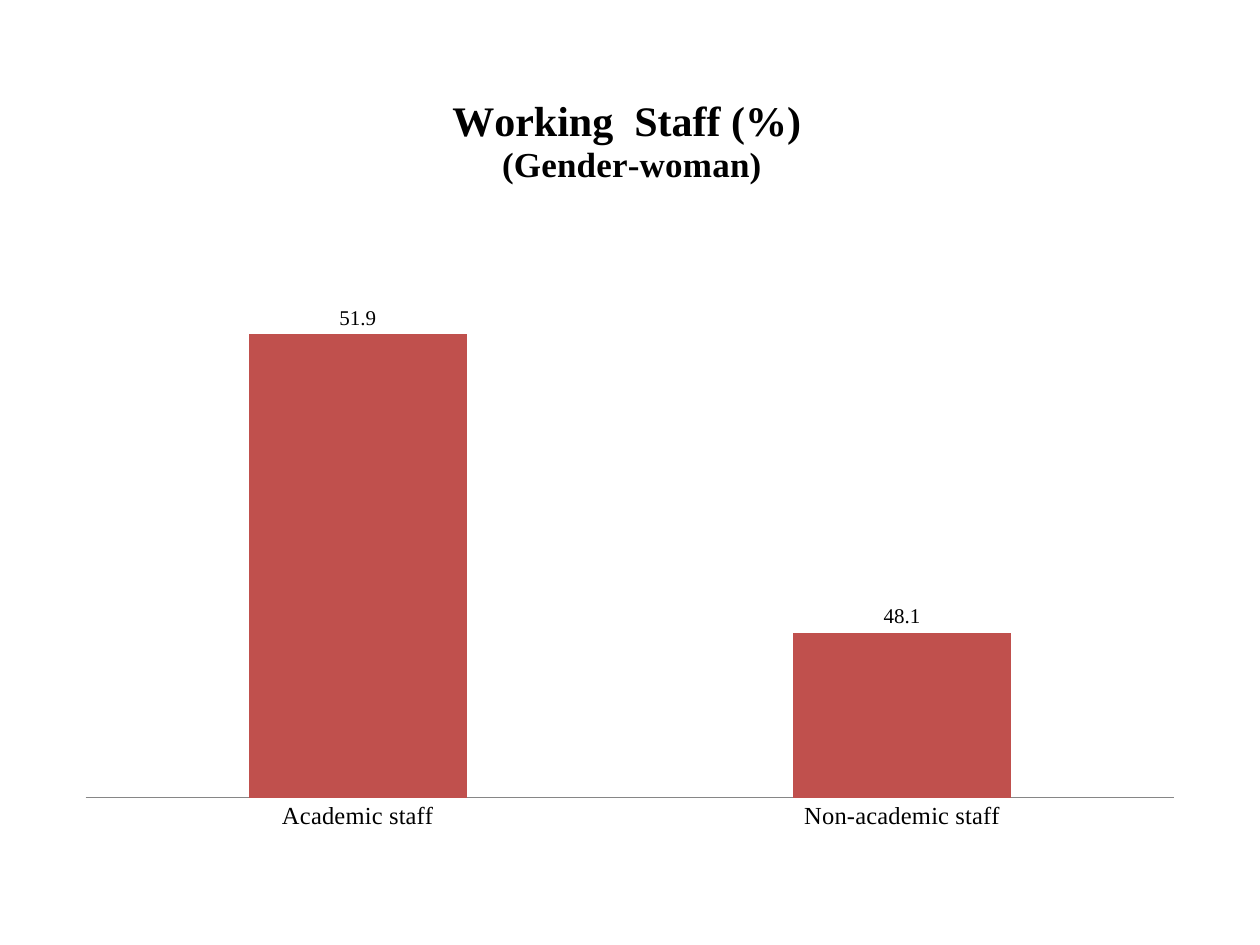
"""Build a slide with a column chart of women among the working staff."""
from lxml import etree
from pptx import Presentation, util as u
from pptx.chart.data import CategoryChartData
from pptx.dml.color import RGBColor
from pptx.enum import chart as ch
from pptx.oxml.ns import qn

COLORS = {"text": "000000", "bar": "C0504D", "axis": "868686"}
FONT = "Times New Roman"
WIDTH, HEIGHT = 10, 7.5
STAFF = {"Academic staff": 51.9, "Non-academic staff": 48.1}


def rgb(name):
    """Return the named colour."""
    return RGBColor.from_string(COLORS[name])


def format_font(font, size, bold=False, name=FONT):
    """Set typeface, size, weight and colour of a font."""
    font.name, font.size, font.bold = name, u.Pt(size), bold
    font.color.rgb = rgb("text")


def add_line(paragraph, content, **font_format):
    """Add formatted text to a paragraph."""
    run = paragraph.add_run()
    run.text = content
    format_font(run.font, **font_format)


def place(part, index, **shares):
    """Fix a chart part's position as shares of the chart's size."""
    layout = part.find(qn("c:layout"))
    if layout is None:
        layout = etree.Element(qn("c:layout"))
        part.insert(index, layout)
    manual = etree.SubElement(layout, qn("c:manualLayout"))
    if "w" in shares:
        etree.SubElement(manual, qn("c:layoutTarget")).set("val", "inner")
    for side in ("x", "y"):
        etree.SubElement(manual, qn(f"c:{side}Mode")).set("val", "edge")
    for side, share in shares.items():
        etree.SubElement(manual, qn(f"c:{side}")).set("val", str(share))


def add_heading(chart):
    """Write the two-line chart title."""
    chart.has_title = True
    title = chart.chart_title
    frame = title.text_frame
    add_line(frame.paragraphs[0], "Working  Staff (%) ", size=24, bold=True)
    add_line(frame.add_paragraph(), "(Gender-woman)", size=20, bold=True)
    place(chart._chartSpace.chart.find(qn("c:title")), 1, x=0.34, y=0.03)


def format_axes(chart):
    """Show the staff groups and hide the value scale."""
    groups, percent = chart.category_axis, chart.value_axis
    groups.major_tick_mark = ch.XL_TICK_MARK.NONE
    groups.format.line.color.rgb = rgb("axis")
    format_font(groups.tick_labels.font, 14)
    percent.minimum_scale, percent.maximum_scale = 46, 53
    percent.has_major_gridlines = False
    percent.visible = False


def format_columns(chart):
    """Colour and label the columns."""
    plot = chart.plots[0]
    plot.gap_width, plot.overlap = 150, -25
    plot.vary_by_categories = False
    women = plot.series[0]
    women.format.fill.solid()
    women.format.fill.fore_color.rgb = rgb("bar")
    labels = women.data_labels
    labels.show_value = True
    labels.position = ch.XL_LABEL_POSITION.OUTSIDE_END
    format_font(labels.font, 12)


def add_staff_chart(slide):
    """Add the column chart of staff shares."""
    data = CategoryChartData()
    data.categories = list(STAFF)
    data.add_series("Series 1", list(STAFF.values()))
    box = (0.05 * WIDTH, 0.55, 0.9 * WIDTH, 0.82 * HEIGHT)
    chart = slide.shapes.add_chart(
        ch.XL_CHART_TYPE.COLUMN_CLUSTERED, *map(u.Inches, box), data).chart
    chart.has_legend = False
    format_font(chart.font, 10, name="Calibri")
    add_heading(chart)
    format_axes(chart)
    format_columns(chart)
    place(chart._chartSpace.chart.plotArea, 0, x=0.02, y=0.23, w=0.96, h=0.71)


def main():
    """Create and save the presentation."""
    deck = Presentation()
    deck.slide_width, deck.slide_height = u.Inches(WIDTH), u.Inches(HEIGHT)
    add_staff_chart(deck.slides.add_slide(deck.slide_layouts[6]))
    deck.save("out.pptx")


if __name__ == "__main__":
    main()
